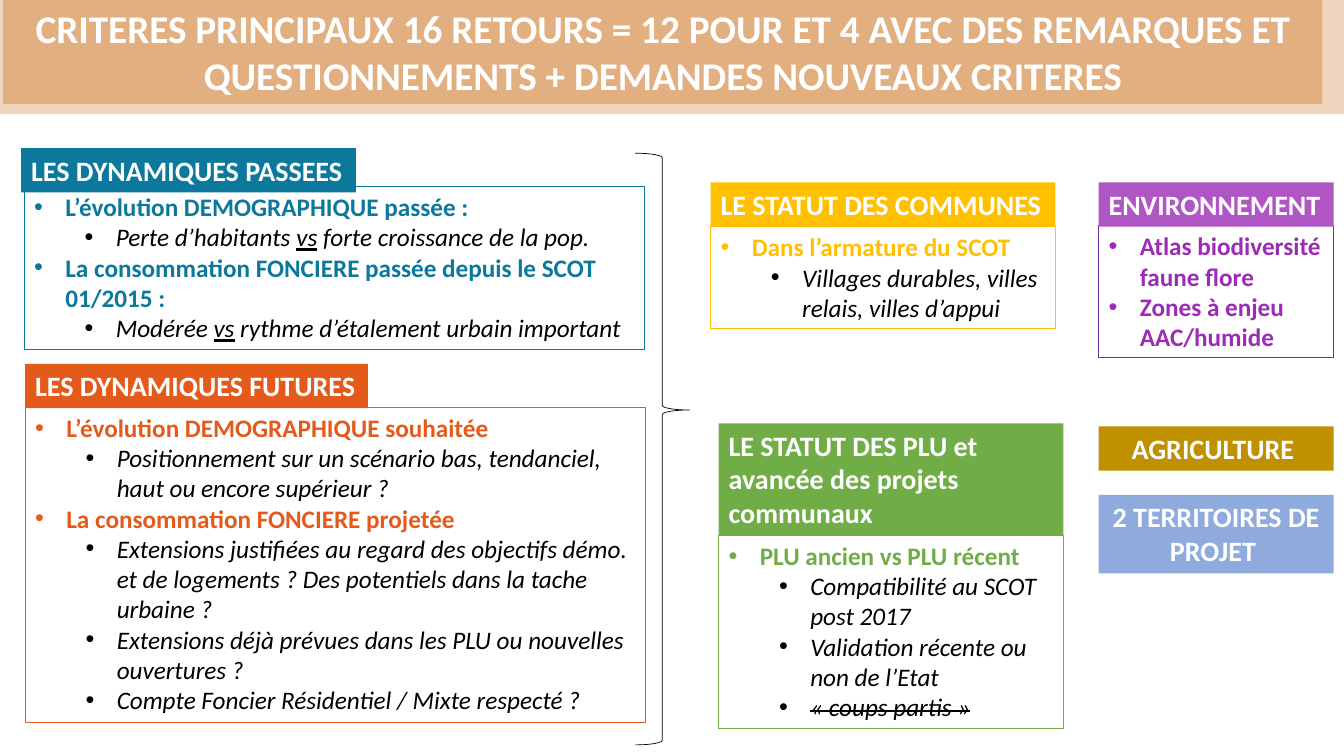
from dataclasses import dataclass

from lxml.etree import SubElement
from pptx import Presentation
from pptx.dml.color import RGBColor
from pptx.enum.shapes import MSO_SHAPE as Preset
from pptx.enum.text import MSO_ANCHOR as Anchor, MSO_AUTO_SIZE as AutoSize, PP_ALIGN as Align
from pptx.oxml.ns import qn
from pptx.util import Inches, Pt

COLUMN = ROW = Inches(0.1)
COLUMNS, ROWS = 133.33, 75


@dataclass(frozen=True)
class Theme:
    font: str = "Calibri"
    title_size: int = 28
    heading_size: int = 20
    body_size: int = 18
    outline: float = 0.75
    brace_line: float = 0.5
    white: str = "FFFFFF"
    black: str = "000000"
    banner: str = "E2AF81"
    past: str = "0C789B"
    future: str = "E45A1A"
    towns: str = "FFC000"
    plans: str = "70AD47"
    nature: str = "AF55C4"
    nature_text: str = "9C2CB6"
    nature_line: str = "7030A0"
    farming: str = "BF9000"
    territories: str = "8FAADC"


THEME = Theme()


@dataclass(frozen=True)
class Box:
    left: float
    top: float
    width: float
    height: float


@dataclass(frozen=True)
class Item:
    text: str
    level: int = 0
    strike: bool = False


def detail(text, strike=False):
    return Item(text, 1, strike)


def add_box(slide, box, preset=Preset.RECTANGLE, fill=None, line=None, weight=THEME.outline):
    shape = slide.shapes.add_shape(preset, int(box.left * COLUMN), int(box.top * ROW),
                                   int(box.width * COLUMN), int(box.height * ROW))
    shape.shadow.inherit = False
    if fill:
        shape.fill.solid()
        shape.fill.fore_color.rgb = RGBColor.from_string(fill)
    else:
        shape.fill.background()
    if line:
        shape.line.color.rgb = RGBColor.from_string(line)
        shape.line.width = Pt(weight)
    else:
        shape.line.fill.background()
    return shape


def prepare_frame(shape, wrap=True):
    frame = shape.text_frame
    frame.word_wrap = wrap
    frame.auto_size = AutoSize.SHAPE_TO_FIT_TEXT
    frame.vertical_anchor = Anchor.TOP
    return frame


def write(paragraph, text, size=THEME.body_size, color=THEME.white, bold=False,
          italic=False, strike=False, align=Align.LEFT):
    paragraph.alignment = align
    for index, part in enumerate(text.split("_")):
        run = paragraph.add_run()
        run.text = part
        font = run.font
        font.name, font.size, font.bold, font.italic = THEME.font, Pt(size), bold, italic
        font.underline = index % 2 == 1
        font.color.rgb = RGBColor.from_string(color)
        if strike:
            run._r.get_or_add_rPr().set("strike", "sngStrike")


def set_bullet(paragraph, level):
    paragraph.level = level
    properties = paragraph._p.get_or_add_pPr()
    properties.set("marL", str(Inches(0.31 + 0.5 * level)))
    properties.set("indent", str(-Inches(0.31)))
    SubElement(properties, qn("a:buFont"), typeface="Arial")
    SubElement(properties, qn("a:buChar"), char="•")


def label(slide, box, text, fill, size=THEME.heading_size, align=Align.LEFT, wrap=True):
    frame = prepare_frame(add_box(slide, box, fill=fill), wrap)
    write(frame.paragraphs[0], text, size=size, bold=True, align=align)


def panel(slide, box, heading, items, accent, text_color=None, line=None, fill=None,
          tab_width=None, tab_height=4.4, tab_shift=0, overlap=0):
    body_top = tab_height - overlap
    body = Box(box.left, box.top + body_top, box.width, box.height - body_top)
    frame = prepare_frame(add_box(slide, body, fill=fill, line=line or accent))
    for index, item in enumerate(items):
        paragraph = frame.add_paragraph() if index else frame.paragraphs[0]
        set_bullet(paragraph, item.level)
        nested = item.level > 0
        write(paragraph, item.text, color=THEME.black if nested else text_color or accent,
              bold=not nested, italic=nested, strike=item.strike)
    tab = Box(box.left + tab_shift, box.top, tab_width or box.width, tab_height)
    label(slide, tab, heading, accent, wrap=tab_width is None)


def banner(slide, box, text):
    strip = add_box(slide, box, fill=THEME.banner)
    color = strip.fill._xPr.find(qn("a:solidFill"))[0]
    SubElement(color, qn("a:alpha"), val="50000")
    front = Box(box.left + 0.3, box.top, box.width - 2.43, box.height - 1)
    label(slide, front, text, THEME.banner, size=THEME.title_size, align=Align.CENTER)


def dynamics(slide, box):
    panel(slide, Box(box.left, box.top, box.width, 20), "LES DYNAMIQUES PASSEES", [
        Item("L’évolution DEMOGRAPHIQUE passée :"),
        detail("Perte d’habitants _vs_ forte croissance de la pop."),
        Item("La consommation FONCIERE passée depuis le SCOT 01/2015 :"),
        detail("Modérée _vs_ rythme d’étalement urbain important"),
    ], THEME.past, fill=THEME.white, tab_width=33.2, tab_shift=-0.3, overlap=0.6)
    panel(slide, Box(box.left + 0.1, box.top + 21.4, box.width, 35.6), "LES DYNAMIQUES FUTURES", [
        Item("L’évolution DEMOGRAPHIQUE souhaitée"),
        detail("Positionnement sur un scénario bas, tendanciel, haut ou encore supérieur ?"),
        Item("La consommation FONCIERE projetée"),
        detail("Extensions justifiées au regard des objectifs démo. et de logements ? "
               "Des potentiels dans la tache urbaine ?"),
        detail("Extensions déjà prévues dans les PLU ou nouvelles ouvertures ?"),
        detail("Compte Foncier Résidentiel / Mixte respecté ?"),
    ], THEME.future, fill=THEME.white, tab_width=34, overlap=0.1)
    brace = add_box(slide, Box(box.left + 60.6, box.top + 0.5, 5.4, 58.7), Preset.RIGHT_BRACE,
                    line=THEME.black, weight=THEME.brace_line)
    brace.adjustments[0], brace.adjustments[1] = 0.083, 0.434


def statuses(slide, box):
    panel(slide, Box(box.left, box.top, box.width, 14.5), "LE STATUT DES COMMUNES", [
        Item("Dans l’armature du SCOT"),
        detail("Villages durables, villes relais, villes d’appui"),
    ], THEME.towns)
    panel(slide, Box(box.left + 0.8, box.top + 23.9, box.width, 30.3),
          "LE STATUT DES PLU et avancée des projets communaux", [
        Item("PLU ancien vs PLU récent"),
        detail("Compatibilité au SCOT post 2017"),
        detail("Validation récente ou non de l’Etat"),
        detail("«\u00a0coups partis\u00a0»", strike=True),
    ], THEME.plans, tab_height=11.1)


def themes(slide, box):
    panel(slide, Box(box.left, box.top, box.width, 17.4), "ENVIRONNEMENT", [
        Item("Atlas biodiversité faune flore"),
        Item("Zones à enjeu AAC/humide"),
    ], THEME.nature, THEME.nature_text, THEME.nature_line, THEME.white, overlap=0.1)
    label(slide, Box(box.left, box.top + 24.2, box.width, 4.4), "AGRICULTURE ",
          THEME.farming, align=Align.CENTER)
    label(slide, Box(box.left, box.top + 31, box.width, 7.8), "2 TERRITOIRES DE PROJET ",
          THEME.territories, align=Align.CENTER)


def main():
    presentation = Presentation()
    presentation.slide_width = int(COLUMNS * COLUMN)
    presentation.slide_height = ROWS * ROW
    slide = presentation.slides.add_slide(presentation.slide_layouts[6])
    banner(slide, Box(0, -0.1, COLUMNS, 11.4),
           "CRITERES PRINCIPAUX 16 RETOURS = 12 POUR ET 4 AVEC DES REMARQUES ET "
           "QUESTIONNEMENTS + DEMANDES NOUVEAUX CRITERES")
    dynamics(slide, Box(2.4, 14.7, 61.5, 57))
    statuses(slide, Box(70.5, 18.1, 34.2, 54.2))
    themes(slide, Box(109, 18.1, 23.3, 38.8))
    presentation.save("out.pptx")


if __name__ == "__main__":
    main()
